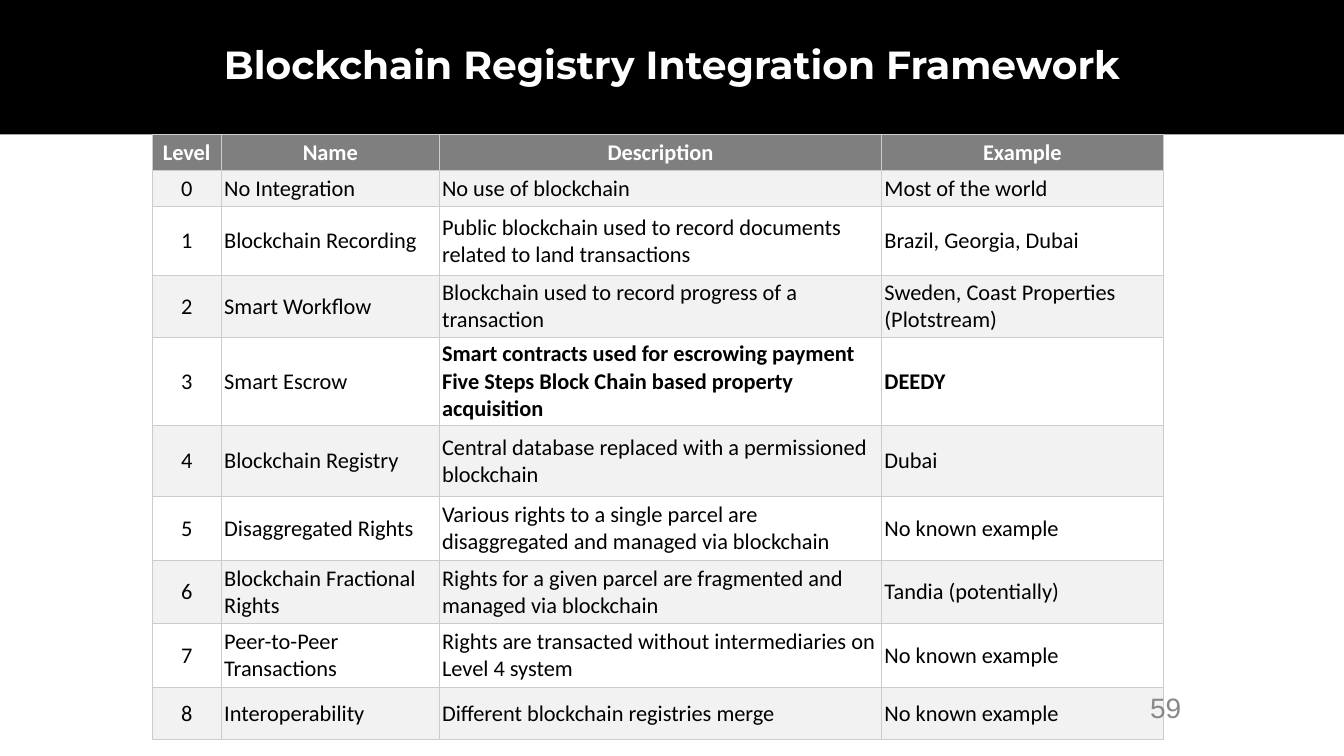
from lxml import etree
from pptx import Presentation
from pptx.dml.color import RGBColor
from pptx.enum import text
from pptx.oxml import ns
from pptx.util import Cm, Pt

BLACK = RGBColor(0x00, 0x00, 0x00)
WHITE = RGBColor(0xFF, 0xFF, 0xFF)
HEADER_GREY = RGBColor(0x7F, 0x7F, 0x7F)
BAND_GREY = RGBColor(0xF2, 0xF2, 0xF2)
BORDER_GREY = RGBColor(0xCC, 0xCC, 0xCC)
NUMBER_GREY = RGBColor(0x88, 0x88, 0x88)

LEFT, CENTER, RIGHT = text.PP_ALIGN.LEFT, text.PP_ALIGN.CENTER, text.PP_ALIGN.RIGHT
MIDDLE = text.MSO_ANCHOR.MIDDLE

SLIDE_WIDTH, SLIDE_HEIGHT = Cm(33.87), Cm(19.05)
BAND_HEIGHT = Cm(3.39)
COLUMN_WIDTHS = (1.75, 5.49, 11.15, 7.09)
ROW_HEIGHTS = (0.91, 0.91, 1.73, 1.57, 2.21, 1.8, 1.6, 1.6, 1.6, 1.32)
HIGHLIGHTED_LEVEL = 3

HEADINGS = ("Level", "Name", "Description", "Example")
LEVELS = (
    ("No Integration", "No use of blockchain", "Most of the world"),
    ("Blockchain Recording",
     "Public blockchain used to record documents related to land transactions",
     "Brazil, Georgia, Dubai"),
    ("Smart Workflow", "Blockchain used to record progress of a transaction",
     "Sweden, Coast Properties (Plotstream)"),
    ("Smart Escrow",
     "Smart contracts used for escrowing payment\n"
     "Five Steps Block Chain based property acquisition",
     "DEEDY"),
    ("Blockchain Registry", "Central database replaced with a permissioned blockchain",
     "Dubai"),
    ("Disaggregated Rights",
     "Various rights to a single parcel are disaggregated and managed via blockchain",
     "No known example"),
    ("Blockchain Fractional Rights",
     "Rights for a given parcel are fragmented and managed via blockchain",
     "Tandia (potentially)"),
    ("Peer-to-Peer Transactions",
     "Rights are transacted without intermediaries on Level 4 system",
     "No known example"),
    ("Interoperability", "Different blockchain registries merge", "No known example"),
)


class FrameworkSlide:
    def __init__(self, deck):
        self.slide = deck.slides.add_slide(deck.slide_layouts[5])
        self.title_font = {"name": "Montserrat", "size": Pt(28), "bold": True}
        self.table_font = {"name": "Calibri", "size": Pt(16)}
        self.number_font = {"name": "Arial", "size": Pt(20)}

    def set_text(self, frame, wording, font, color, align):
        frame.text = wording
        frame.word_wrap = True
        for paragraph in frame.paragraphs:
            paragraph.alignment = align
            for key, value in font.items():
                setattr(paragraph.font, key, value)
            paragraph.font.color.rgb = color

    def title_band(self, wording):
        band = self.slide.shapes.title
        place = {"left": 0, "top": 0, "width": SLIDE_WIDTH, "height": BAND_HEIGHT}
        for key, value in place.items():
            setattr(band, key, value)
        band.fill.solid()
        band.fill.fore_color.rgb = BLACK
        self.set_text(band.text_frame, wording, self.title_font, WHITE, CENTER)
        band.text_frame.auto_size = text.MSO_AUTO_SIZE.NONE
        band.text_frame.vertical_anchor = MIDDLE
        band.text_frame.paragraphs[0].line_spacing = 0.9

    def table(self, rows, left, top):
        table = self.slide.shapes.add_table(
            len(rows), len(COLUMN_WIDTHS), left, top,
            Cm(sum(COLUMN_WIDTHS)), Cm(sum(ROW_HEIGHTS))).table
        table.horz_banding = False
        for column, width in zip(table.columns, COLUMN_WIDTHS):
            column.width = Cm(width)
        for row, height in zip(table.rows, ROW_HEIGHTS):
            row.height = Cm(height)
        for r, row in enumerate(rows):
            for c, wording in enumerate(row):
                self.cell(table.cell(r, c), wording, r, c)

    def cell(self, cell, wording, r, c):
        header = r == 0
        bold = header or (r == HIGHLIGHTED_LEVEL + 1 and c >= 2)
        layout = {"vertical_anchor": MIDDLE}
        for side in ("left", "right", "top", "bottom"):
            layout["margin_" + side] = Cm(0.07)
        for key, value in layout.items():
            setattr(cell, key, value)
        self.set_text(cell.text_frame, wording, {**self.table_font, "bold": bold},
                      WHITE if header else BLACK, CENTER if header or c == 0 else LEFT)
        self.borders(cell)
        if header or r % 2:
            cell.fill.solid()
            cell.fill.fore_color.rgb = HEADER_GREY if header else BAND_GREY
        else:
            cell.fill.background()

    def borders(self, cell):
        properties = cell._tc.get_or_add_tcPr()
        for edge in ("a:lnL", "a:lnR", "a:lnT", "a:lnB"):
            line = etree.SubElement(properties, ns.qn(edge), w=str(Pt(0.75)))
            fill = etree.SubElement(line, ns.qn("a:solidFill"))
            etree.SubElement(fill, ns.qn("a:srgbClr"), val=str(BORDER_GREY))

    def page_number(self, number):
        box = self.slide.shapes.add_textbox(Cm(28.14), Cm(16.64), Cm(1.88), Cm(2.36))
        self.set_text(box.text_frame, number, self.number_font, NUMBER_GREY, RIGHT)
        box.text_frame.vertical_anchor = MIDDLE


def main():
    deck = Presentation()
    deck.slide_width, deck.slide_height = SLIDE_WIDTH, SLIDE_HEIGHT
    slide = FrameworkSlide(deck)
    slide.title_band("Blockchain Registry Integration Framework")
    numbered = [(str(level), *row) for level, row in enumerate(LEVELS)]
    slide.table([HEADINGS, *numbered], Cm(3.83), BAND_HEIGHT)
    slide.page_number("59")
    deck.save("out.pptx")


if __name__ == "__main__":
    main()
